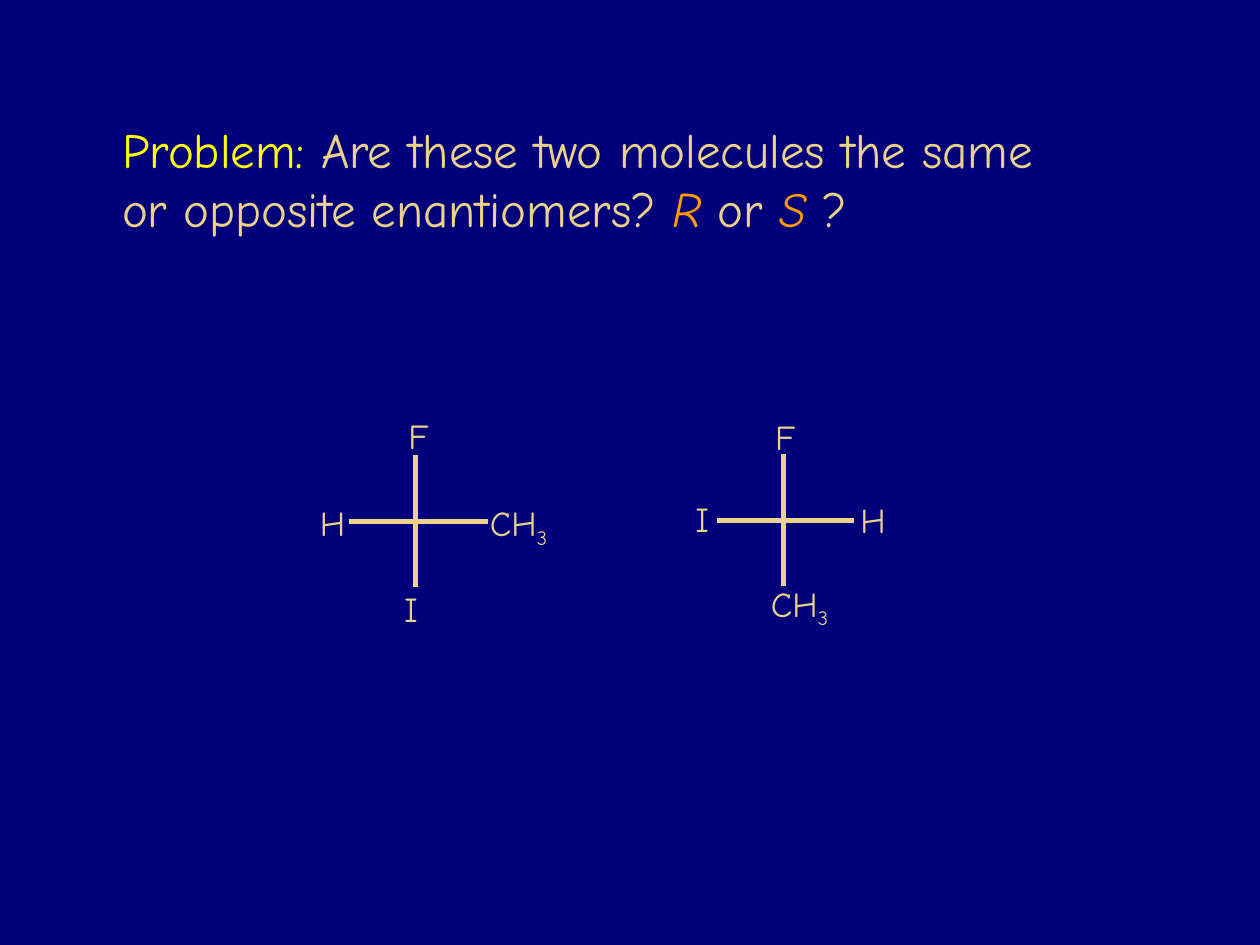
from pptx import Presentation
from pptx.dml.color import RGBColor
from pptx.enum.shapes import MSO_CONNECTOR
from pptx.enum.text import MSO_AUTO_SIZE, PP_ALIGN
from pptx.oxml.ns import qn
from pptx.util import Inches, Pt
from lxml.etree import SubElement

COLORS = {"back": "00007A", "sand": "EBD189", "lemon": "FFFF00", "orange": "FF9900"}


class Sheet:
    face = "Comic Neue"

    def __init__(self, deck):
        self.slide = deck.slides.add_slide(deck.slide_layouts[6])
        fill = self.slide.background.fill
        fill.solid()
        fill.fore_color.rgb = self.color("back")

    def color(self, name):
        return RGBColor.from_string(COLORS[name])

    def text(self, box, lines, size, align=PP_ALIGN.LEFT):
        frame = self.slide.shapes.add_textbox(*map(Inches, box)).text_frame
        frame.word_wrap = True
        frame.auto_size = MSO_AUTO_SIZE.SHAPE_TO_FIT_TEXT
        for i, line in enumerate(lines):
            para = frame.add_paragraph() if i else frame.paragraphs[0]
            para.alignment = align
            for words, tint, *marks in line:
                run = para.add_run()
                run.text = words
                form = {"name": self.face, "size": Pt(size), "italic": "italic" in marks}
                for key, value in form.items():
                    setattr(run.font, key, value)
                run.font.color.rgb = self.color(tint)
                if "sub" in marks:
                    run._r.get_or_add_rPr().set("baseline", "-25000")

    def atom(self, box, name, align=PP_ALIGN.LEFT):
        runs = [(name.rstrip("3"), "sand")]
        if name.endswith("3"):
            runs.append(("3", "sand", "sub"))
        self.text(box, [runs], 20, align)

    def cross(self, left, top, mid, right):
        group = self.slide.shapes.add_group_shape()
        row = top + 0.53
        for ends in ((left, row, right, row), (mid, top, mid, top + 1.05)):
            bond = group.shapes.add_connector(MSO_CONNECTOR.STRAIGHT, *map(Inches, ends))
            bond.line.color.rgb = self.color("sand")
            bond.line.width = Pt(3)
            SubElement(bond._element.spPr, qn("a:effectLst"))


def main():
    deck = Presentation()
    deck.slide_width, deck.slide_height = Inches(10), Inches(7.5)
    sheet = Sheet(deck)

    sheet.text((0.87, 0.9, 8.21, 1.03), [
        [("Problem: ", "lemon"), ("Are these two molecules the same", "sand")],
        [("or opposite enantiomers? ", "sand"), ("R ", "orange", "italic"),
         ("or ", "sand"), ("S", "orange", "italic"), (" ?", "sand")],
    ], 28)

    pair = [
        ((2.77, 3.61, 3.3, 3.87), [
            ("I", (3.11, 4.61, 0.4, 0.43)),
            ("F", (3.02, 3.24, 0.48, 0.43), PP_ALIGN.RIGHT),
            ("H", (2.44, 3.93, 0.45, 0.43)),
            ("CH3", (3.79, 3.93, 0.95, 0.43)),
        ]),
        ((5.69, 3.6, 6.22, 6.78), [
            ("I", (5.42, 3.9, 0.41, 0.43)),
            ("F", (5.93, 3.25, 0.48, 0.43), PP_ALIGN.RIGHT),
            ("H", (6.73, 3.91, 0.43, 0.43)),
            ("CH3", (6.02, 4.57, 1.07, 0.84)),
        ]),
    ]
    for bonds, atoms in pair:
        sheet.cross(*bonds)
        for name, box, *align in atoms:
            sheet.atom(box, name, *align)

    deck.save("out.pptx")


if __name__ == "__main__":
    main()
